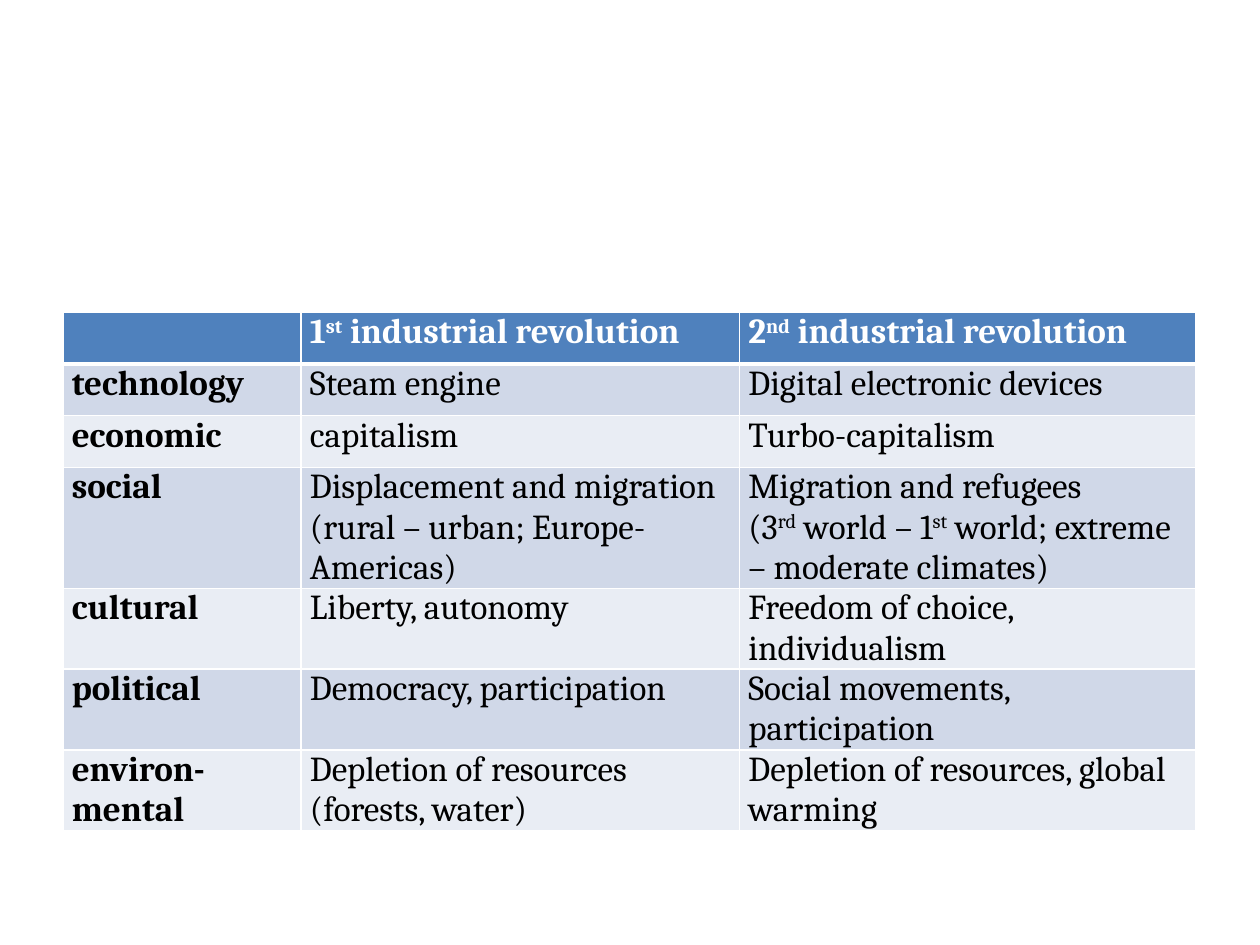
from lxml import etree
from pptx import Presentation
from pptx import util as u
from pptx.dml.color import RGBColor
from pptx.oxml.ns import qn

COLORS = {
    "header": "4F81BD",
    "band_dark": "D0D8E8",
    "band_light": "E9EDF4",
    "light": "FFFFFF",
    "dark": "000000",
}
FONT = "Cambria"
COLUMN_WIDTHS = [1.89, 3.48, 3.62]
ROW_HEIGHT = 0.41

# Text between carets is superscript; a line break starts a new paragraph.
COMPARISON = [
    ["", "1^st^ industrial revolution", "2^nd^ industrial revolution"],
    ["technology", "Steam engine", "Digital electronic devices"],
    ["economic", "capitalism", "Turbo-capitalism"],
    ["social", "Displacement and migration (rural – urban; Europe- Americas)",
     "Migration and refugees\n(3^rd^ world – 1^st^ world; extreme – moderate climates)"],
    ["cultural", "Liberty, autonomy", "Freedom of choice, individualism"],
    ["political", "Democracy, participation", "Social movements, participation"],
    ["environ-mental", "Depletion of resources (forests, water)",
     "Depletion of resources, global warming"],
]


def rgb(name):
    return RGBColor.from_string(COLORS[name])


def write_paragraph(paragraph, line, color, bold):
    font = paragraph.font
    font.name, font.size, font.bold = FONT, u.Pt(20), bold
    font.color.rgb = rgb(color)
    for index, part in enumerate(line.split("^")):
        if part:
            run = paragraph.add_run()
            run.text = part
            # Table style would otherwise decide weight and colour
            run.font.bold = bold
            run.font.color.rgb = rgb(color)
            if index % 2:
                run._r.get_or_add_rPr().set("baseline", "30000")


def set_borders(cell, bottom_width):
    properties = cell._tc.get_or_add_tcPr()
    widths = {"a:lnL": 1, "a:lnR": 1, "a:lnT": 1, "a:lnB": bottom_width}
    for position, (side, width) in enumerate(widths.items()):
        line = etree.Element(qn(side), w=str(u.Pt(width)))
        fill = etree.SubElement(line, qn("a:solidFill"))
        etree.SubElement(fill, qn("a:srgbClr"), val=COLORS["light"])
        properties.insert(position, line)


def fill_cell(cell, content, fill, color, bold, bottom_width):
    cell.margin_left = cell.margin_right = u.Inches(0.07)
    cell.margin_top = cell.margin_bottom = 0
    cell.fill.solid()
    cell.fill.fore_color.rgb = rgb(fill)
    set_borders(cell, bottom_width)
    frame = cell.text_frame
    for index, line in enumerate(content.split("\n")):
        paragraph = frame.add_paragraph() if index else frame.paragraphs[0]
        write_paragraph(paragraph, line, color, bold)


def add_comparison_table(slide, left, top):
    table = slide.shapes.add_table(
        len(COMPARISON), len(COLUMN_WIDTHS), left, top,
        u.Inches(sum(COLUMN_WIDTHS)), u.Inches(ROW_HEIGHT * len(COMPARISON))).table
    table.horz_banding = False
    for column, width in zip(table.columns, COLUMN_WIDTHS):
        column.width = u.Inches(width)
    for r, row in enumerate(COMPARISON):
        table.rows[r].height = u.Inches(ROW_HEIGHT)
        is_header = r == 0
        band = "band_dark" if r % 2 else "band_light"
        for c, content in enumerate(row):
            fill_cell(table.cell(r, c), content,
                      fill="header" if is_header else band,
                      color="light" if is_header else "dark",
                      bold=is_header or c == 0,
                      bottom_width=3 if is_header else 1)


def main():
    presentation = Presentation()
    presentation.slide_width = u.Inches(10)
    presentation.slide_height = u.Inches(7.5)
    slide = presentation.slides.add_slide(presentation.slide_layouts[6])
    add_comparison_table(slide, u.Inches(0.5), u.Inches(2.48))
    presentation.save("out.pptx")


if __name__ == "__main__":
    main()
